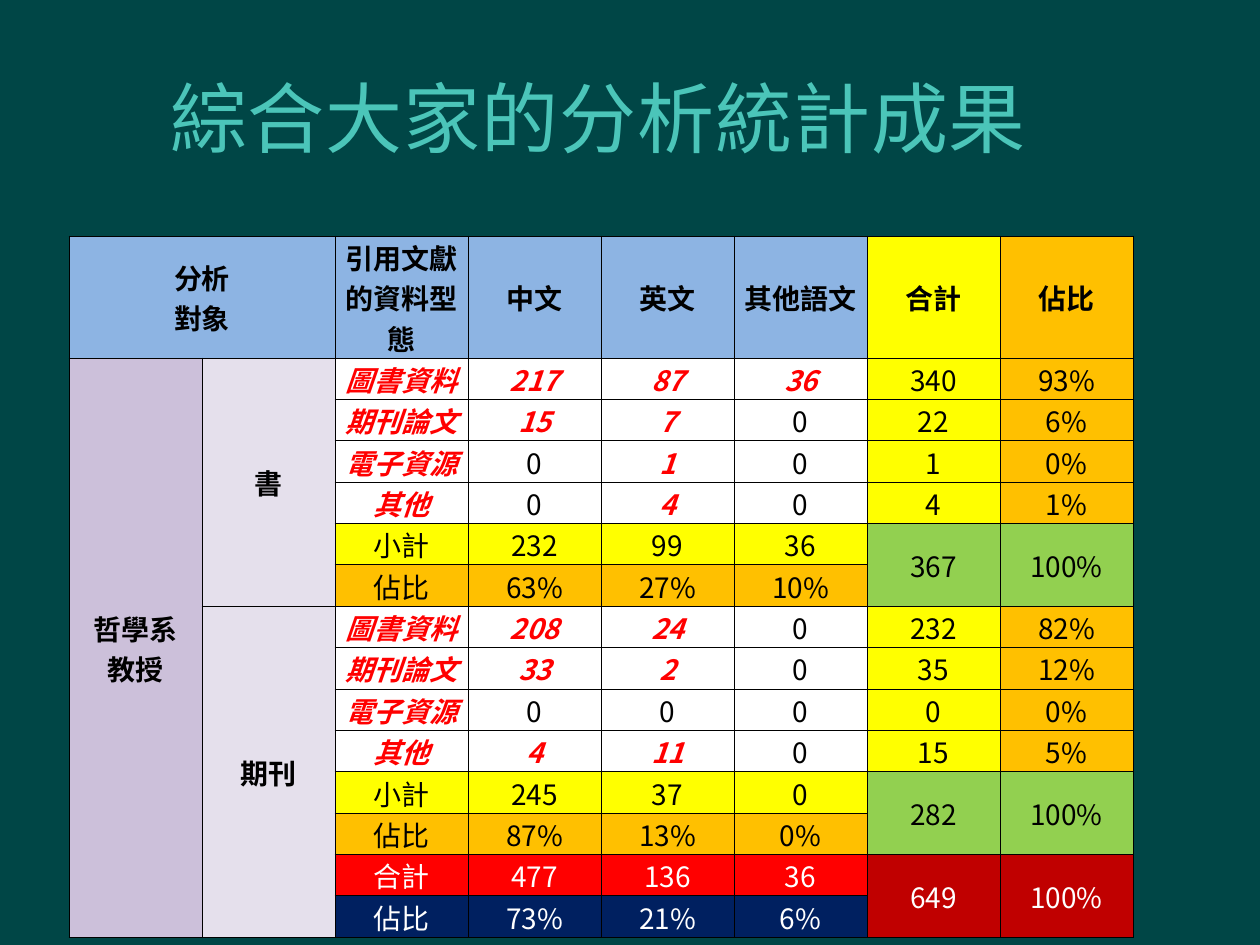
from dataclasses import dataclass

from lxml import etree
from pptx import Presentation
from pptx.dml.color import RGBColor
from pptx.enum.text import MSO_ANCHOR, MSO_AUTO_SIZE, PP_ALIGN
from pptx.oxml.ns import qn
from pptx.util import Emu, Pt

CENTER = PP_ALIGN.CENTER
MIDDLE = MSO_ANCHOR.MIDDLE
NO_FIT = MSO_AUTO_SIZE.NONE

PX_PER_INCH = 126
TITLE_FONT = "Arial"
BODY_FONT = "Noto Sans CJK TC"

BACKGROUND = RGBColor(0x00, 0x46, 0x46)
TEAL = RGBColor(0x4B, 0xC5, 0xB9)
BLACK = RGBColor(0x00, 0x00, 0x00)
WHITE = RGBColor(0xFF, 0xFF, 0xFF)
RED = RGBColor(0xFF, 0x00, 0x00)
DARK_RED = RGBColor(0xC0, 0x00, 0x00)
NAVY = RGBColor(0x00, 0x20, 0x60)
BLUE = RGBColor(0x8D, 0xB4, 0xE3)
YELLOW = RGBColor(0xFF, 0xFF, 0x00)
ORANGE = RGBColor(0xFF, 0xC0, 0x00)
GREEN = RGBColor(0x92, 0xD0, 0x50)
PURPLE = RGBColor(0xCC, 0xC0, 0xDA)
LAVENDER = RGBColor(0xE5, 0xE0, 0xEC)


@dataclass(frozen=True)
class Look:
    fill: RGBColor
    color: RGBColor = BLACK
    bold: bool = False
    italic: bool = False


@dataclass(frozen=True)
class Merge:
    row: int
    column: int
    height: int
    width: int
    text: str
    look: Look


PLAIN = Look(WHITE)
CITED = Look(WHITE, RED, bold=True, italic=True)
SUM = Look(YELLOW)
SHARE = Look(ORANGE)
SUBTOTAL = Look(GREEN)
GRAND_SUM = Look(RED, WHITE)
GRAND_SHARE = Look(NAVY, WHITE)
GRAND_TOTAL = Look(DARK_RED, WHITE)
GROUP = Look(LAVENDER, bold=True)

# Table content: headings and rows start at the third column
FIRST_COLUMN = 2
HEADINGS = ["引用文獻的資料型態", "中文", "英文", "其他語文", "合計", "佔比"]
HEADING_FILLS = [BLUE] * 4 + [YELLOW, ORANGE]
BOOK_ROWS = [
    ["圖書資料", "217", "87", "36", "340", "93%"],
    ["期刊論文", "15", "7", "0", "22", "6%"],
    ["電子資源", "0", "1", "0", "1", "0%"],
    ["其他", "0", "4", "0", "4", "1%"],
    ["小計", "232", "99", "36"],
    ["佔比", "63%", "27%", "10%"],
]
JOURNAL_ROWS = [
    ["圖書資料", "208", "24", "0", "232", "82%"],
    ["期刊論文", "33", "2", "0", "35", "12%"],
    ["電子資源", "0", "0", "0", "0", "0%"],
    ["其他", "4", "11", "0", "15", "5%"],
    ["小計", "245", "37", "0"],
    ["佔比", "87%", "13%", "0%"],
]
TOTAL_ROWS = [
    ["合計", "477", "136", "36"],
    ["佔比", "73%", "21%", "6%"],
]
ROWS = BOOK_ROWS + JOURNAL_ROWS + TOTAL_ROWS
SUMMARY_LOOKS = [SUM, SHARE, SUM, SHARE, GRAND_SUM, GRAND_SHARE]
MERGES = [
    Merge(0, 0, 1, 2, "分析\v對象", Look(BLUE, bold=True)),
    Merge(1, 0, 14, 1, "哲學系\v教授", Look(PURPLE, bold=True)),
    Merge(1, 1, 6, 1, "書", GROUP),
    Merge(7, 1, 8, 1, "期刊", GROUP),
]
for top, total, total_look in [(5, "367", SUBTOTAL), (11, "282", SUBTOTAL),
                               (13, "649", GRAND_TOTAL)]:
    MERGES += [Merge(top, 6, 2, 1, total, total_look),
               Merge(top, 7, 2, 1, "100%", total_look)]


def px(length: int) -> Emu:
    return Emu(round(length * 914400 / PX_PER_INCH))


def set_east_asian_font(span, name: str) -> None:
    latin = span._r.get_or_add_rPr().find(qn("a:latin"))
    east_asian = etree.Element(qn("a:ea"), typeface=name)
    latin.addnext(east_asian)


def add_borders(cell) -> None:
    properties = cell._tc.get_or_add_tcPr()
    for position, side in enumerate(("a:lnL", "a:lnR", "a:lnT", "a:lnB")):
        line = etree.Element(qn(side), w=str(Pt(0.5)))
        fill = etree.SubElement(line, qn("a:solidFill"))
        etree.SubElement(fill, qn("a:srgbClr"), val=str(BLACK))
        properties.insert(position, line)


def write_cell(cell, text: str, look: Look) -> None:
    cell.fill.solid()
    cell.fill.fore_color.rgb = look.fill
    cell.vertical_anchor = MIDDLE
    para = cell.text_frame.paragraphs[0]
    para.text = text
    para.alignment = CENTER
    for span in para.runs:
        span.font.name = BODY_FONT
        span.font.size = Pt(16)
        span.font.bold = look.bold
        span.font.italic = look.italic
        span.font.color.rgb = look.color
        set_east_asian_font(span, BODY_FONT)


def add_title(page) -> None:
    title = page.shapes.title
    title.left, title.top, title.width, title.height = map(px, (63, 38, 1071, 158))
    frame = title.text_frame
    frame.text = "綜合大家的分析統計成果"
    frame.auto_size = NO_FIT
    frame.vertical_anchor = MIDDLE
    para = frame.paragraphs[0]
    para.alignment = CENTER
    span = para.runs[0]
    span.font.name = TITLE_FONT
    span.font.size = Pt(44)
    span.font.color.rgb = TEAL
    span._r.get_or_add_rPr().set("spc", "50")
    set_east_asian_font(span, BODY_FONT)


def add_statistics(page) -> None:
    table = page.shapes.add_table(len(ROWS) + 1, len(HEADINGS) + FIRST_COLUMN,
                                  px(69), px(236), px(1064), px(632)).table
    table.first_row = False
    table.horz_banding = False
    for column in table.columns:
        column.width = px(133)
    for index, row in enumerate(table.rows):
        row.height = px(38 if index else 100)
    for cell in table.iter_cells():
        cell.margin_left = cell.margin_right = cell.margin_top = px(1)
        cell.margin_bottom = 0
        add_borders(cell)

    # Headings
    for column, (text, fill) in enumerate(zip(HEADINGS, HEADING_FILLS), FIRST_COLUMN):
        write_cell(table.cell(0, column), text, Look(fill, bold=True))

    # Detail rows stress every figure above zero; summary rows have one look
    summary_looks = iter(SUMMARY_LOOKS)
    for row, texts in enumerate(ROWS, 1):
        if len(texts) == len(HEADINGS):
            looks = [PLAIN if text == "0" else CITED for text in texts[:4]]
            looks += [SUM, SHARE]
        else:
            looks = [next(summary_looks)] * len(texts)
        for column, (text, look) in enumerate(zip(texts, looks), FIRST_COLUMN):
            write_cell(table.cell(row, column), text, look)

    # Merged cells
    for merge in MERGES:
        first = table.cell(merge.row, merge.column)
        first.merge(table.cell(merge.row + merge.height - 1,
                               merge.column + merge.width - 1))
        write_cell(first, merge.text, merge.look)


def main() -> None:
    deck = Presentation()
    deck.slide_width, deck.slide_height = px(1260), px(945)
    page = deck.slides.add_slide(deck.slide_layouts[5])
    page.background.fill.solid()
    page.background.fill.fore_color.rgb = BACKGROUND
    add_title(page)
    add_statistics(page)
    deck.save("out.pptx")


if __name__ == "__main__":
    main()
